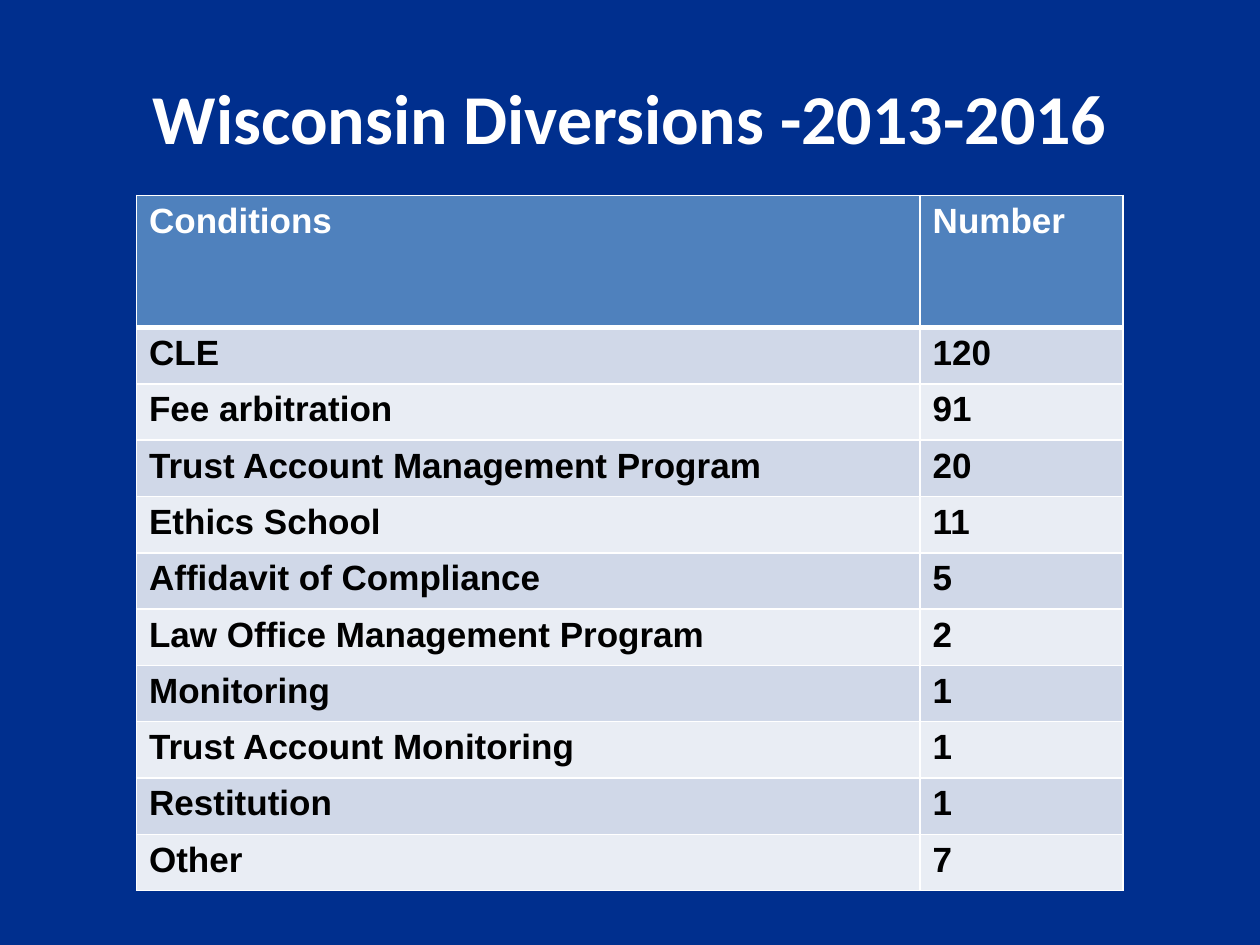
from dataclasses import dataclass

from lxml.etree import SubElement
from pptx import Presentation
from pptx.dml.color import RGBColor
from pptx.enum.text import MSO_ANCHOR, PP_ALIGN
from pptx.oxml.ns import qn
from pptx.util import Pt


@dataclass(frozen=True)
class Theme:
    background: str = "002F8E"
    light: str = "FFFFFF"
    dark: str = "000000"
    header: str = "4F81BD"
    bands: tuple = ("D0D8E8", "E9EDF4")
    title_font: str = "Calibri"
    body_font: str = "Arial"
    title_size: int = 40
    body_size: int = 20
    rule: int = 1
    header_rule: int = 3


THEME = Theme()

CONDITIONS = [
    ("Conditions", "Number"),
    ("CLE", "120"),
    ("Fee arbitration", "91"),
    ("Trust Account Management Program", "20"),
    ("Ethics School", "11"),
    ("Affidavit of Compliance", "5"),
    ("Law Office Management Program", "2"),
    ("Monitoring", "1"),
    ("Trust Account Monitoring", "1"),
    ("Restitution", "1"),
    ("Other", "7"),
]


def format_text(paragraph, font, size, color):
    formats = {"name": font, "size": Pt(size), "bold": True}
    for run in paragraph.runs:
        for attribute, value in formats.items():
            setattr(run.font, attribute, value)
        run.font.color.rgb = RGBColor.from_string(color)


def add_borders(cell, widths):
    """Draw the cell's borders; widths maps each side to points."""
    properties = cell._tc.get_or_add_tcPr()
    for side, width in widths.items():
        line = SubElement(properties, qn(f"a:ln{side}"), w=str(Pt(width)))
        fill = SubElement(line, qn("a:solidFill"))
        SubElement(fill, qn("a:srgbClr"), val=THEME.light)


def place_title(slide, text, box):
    title = slide.shapes.title
    for attribute, value in zip(("left", "top", "width", "height"), box):
        setattr(title, attribute, Pt(value))
    frame = title.text_frame
    frame.text = text
    frame.word_wrap = True
    frame.vertical_anchor = MSO_ANCHOR.MIDDLE
    heading = frame.paragraphs[0]
    heading.alignment = PP_ALIGN.CENTER
    format_text(heading, THEME.title_font, THEME.title_size, THEME.light)


def place_conditions(slide, records, box, number_width, header_height):
    left, top, width, height = box
    table = slide.shapes.add_table(
        len(records), 2, Pt(left), Pt(top), Pt(width), Pt(height)).table

    # Column and row sizes
    table.columns[0].width = Pt(width - number_width)
    table.columns[1].width = Pt(number_width)
    body_height = (height - header_height) / (len(records) - 1)
    for index, row in enumerate(table.rows):
        row.height = Pt(body_height if index else header_height)

    # Header and banded body cells
    for index, record in enumerate(records):
        band = THEME.bands[(index - 1) % 2] if index else THEME.header
        ink = THEME.dark if index else THEME.light
        borders = dict.fromkeys("LRTB", THEME.rule)
        if index == 0:
            borders["B"] = THEME.header_rule
        elif index == 1:
            borders["T"] = THEME.header_rule
        for column, text in enumerate(record):
            cell = table.cell(index, column)
            cell.text = text
            format_text(cell.text_frame.paragraphs[0],
                        THEME.body_font, THEME.body_size, ink)
            add_borders(cell, borders)
            cell.fill.solid()
            cell.fill.fore_color.rgb = RGBColor.from_string(band)


def main():
    presentation = Presentation()
    presentation.slide_width, presentation.slide_height = Pt(720), Pt(540)
    slide = presentation.slides.add_slide(presentation.slide_layouts[5])
    background = slide.background.fill
    background.solid()
    background.fore_color.rgb = RGBColor.from_string(THEME.background)

    place_title(slide, "Wisconsin Diversions -2013-2016", (36, 21.6, 648, 90))
    place_conditions(slide, CONDITIONS, (78, 111.6, 563.6, 397.6),
                     number_width=115.8, header_height=75.6)
    presentation.save("out.pptx")


if __name__ == "__main__":
    main()
